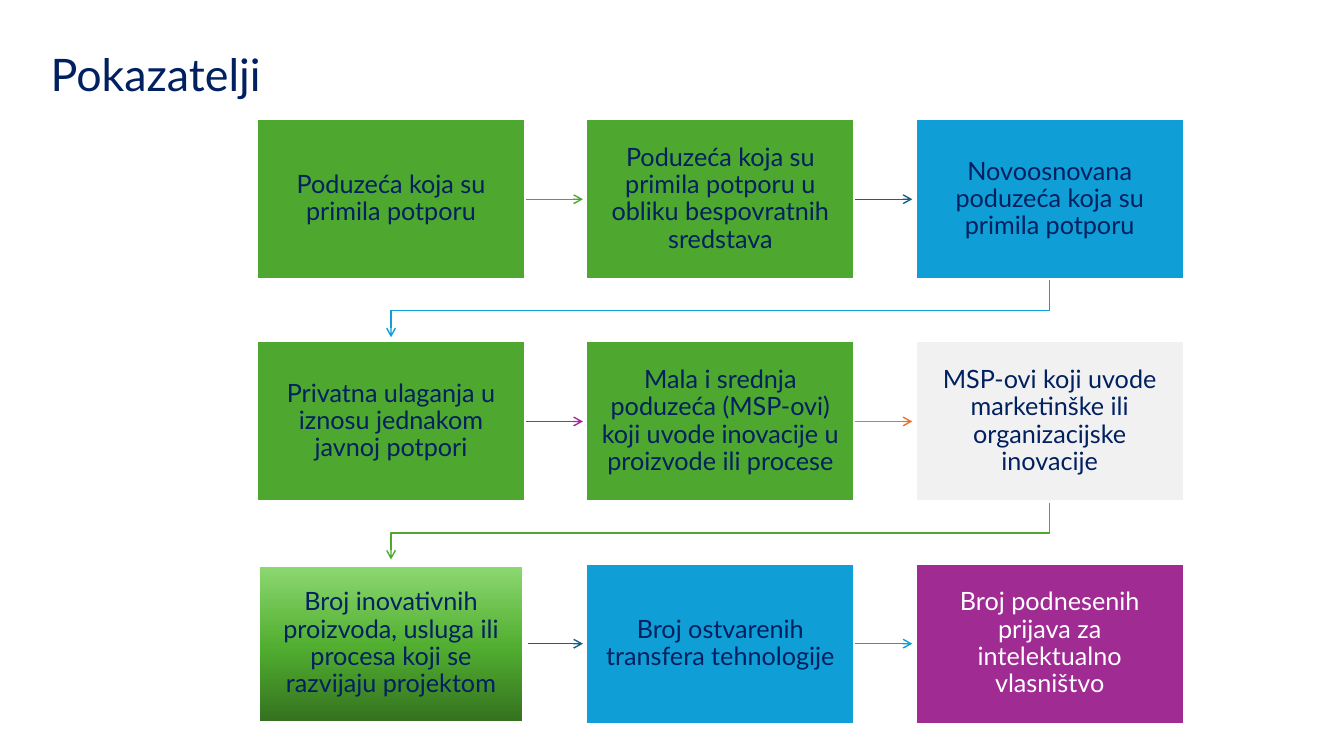
from copy import deepcopy

from lxml.etree import SubElement
from pptx import Presentation
from pptx.dml.color import RGBColor
from pptx.enum.shapes import MSO_CONNECTOR as Connector, MSO_SHAPE as Shape
from pptx.enum.text import MSO_ANCHOR as Anchor, PP_ALIGN as Align
from pptx.oxml.ns import qn
from pptx.util import Cm, Pt

COLOURS = {
    "navy": "002060", "green": "4EA72E", "blue": "0F9ED5", "teal": "156082",
    "purple": "A02B93", "orange": "E97132", "grey": "F1F1F1", "white": "FFFFFF",
    "dark green": "34701F", "mid green": "51AE30", "light green": "8ED973",
}
FONT = "Lato"
COLUMNS = 3
LEFT, TOP = 6.48, 3
WIDTH, HEIGHT = 6.75, 4.04
STEP_X, STEP_Y = 8.3, 5.6
REACH = 1.46
BEND = 0.79

INDICATORS = [
    ("Poduzeća koja su primila potporu", "green", "green"),
    ("Poduzeća koja su primila potporu u obliku bespovratnih sredstava", "green", "teal"),
    ("Novoosnovana poduzeća koja su primila potporu", "blue", "blue"),
    ("Privatna ulaganja u iznosu jednakom javnoj potpori", "green", "purple"),
    ("Mala i srednja poduzeća (MSP-ovi) koji uvode inovacije u proizvode ili procese",
     "green", "orange"),
    ("MSP-ovi koji uvode marketinške ili organizacijske inovacije", "grey", "green"),
    ("Broj inovativnih proizvoda, usluga ili procesa koji se razvijaju projektom",
     "gradient", "teal"),
    ("Broj ostvarenih transfera tehnologije", "blue", "blue"),
    ("Broj podnesenih prijava za intelektualno vlasništvo", "purple", None),
]


def colour(name):
    return RGBColor.from_string(COLOURS[name])


def write_text(shape, text, size, ink, align):
    frame = shape.text_frame
    frame.text = text
    frame.word_wrap = True
    frame.vertical_anchor = Anchor.MIDDLE
    para = frame.paragraphs[0]
    para.alignment = align
    para.line_spacing = 0.9
    font = para.runs[0].font
    font.name = FONT
    font.size = Pt(size)
    font.color.rgb = colour(ink)


def add_title(page, text):
    title = page.shapes.title
    title.left, title.top, title.width, title.height = Cm(1.02), Cm(0), Cm(26.14), Cm(3.89)
    write_text(title, text, 32, "navy", Align.LEFT)


def fill_gradient(box):
    box.fill.gradient()
    box.fill.gradient_angle = 90
    stop_list = box.fill._fill._gradFill.find(qn("a:gsLst"))
    stop_list.insert(1, deepcopy(stop_list[0]))
    stops = [("dark green", 0), ("mid green", 0.48), ("light green", 1)]
    for stop, (name, position) in zip(box.fill.gradient_stops, stops):
        stop.color.rgb = colour(name)
        stop.position = position


def add_box(page, left, top, text, fill):
    box = page.shapes.add_shape(Shape.RECTANGLE, Cm(left), Cm(top), Cm(WIDTH), Cm(HEIGHT))
    box.shadow.inherit = False
    if fill == "gradient":
        fill_gradient(box)
    else:
        box.fill.solid()
        box.fill.fore_color.rgb = colour(fill)
    box.line.color.rgb = colour("white")
    box.line.width = Pt(4.5 if fill == "gradient" else 1.5)
    frame = box.text_frame
    frame.margin_left = frame.margin_right = Cm(0.33)
    frame.margin_top = frame.margin_bottom = Cm(0.35)
    write_text(box, text, 18, "white" if fill == "purple" else "navy", Align.CENTER)
    return box


def finish_arrow(page, arrow, ink):
    arrow.line.color.rgb = colour(ink)
    arrow.line.width = Pt(1)
    SubElement(arrow.line._get_or_add_ln(), qn("a:tailEnd"), type="arrow")
    page.shapes._spTree.insert(2, arrow._element)


def add_straight_arrow(page, box, ink):
    start = box.left + box.width
    middle = box.top + box.height // 2
    arrow = page.shapes.add_connector(
        Connector.STRAIGHT, start, middle, start + Cm(REACH), middle)
    arrow.begin_connect(box, 3)
    finish_arrow(page, arrow, ink)
    SubElement(arrow._element.spPr, qn("a:effectLst"))


def add_return_arrow(page, box, ink):
    start_x = box.left + box.width // 2
    end_x = Cm(LEFT + WIDTH / 2)
    bottom = box.top + box.height
    bend = bottom + Cm(BEND)
    builder = page.shapes.build_freeform(start_x, bottom)
    builder.add_line_segments(
        [(start_x, bend), (end_x, bend), (end_x, bottom + Cm(REACH))], close=False)
    arrow = builder.convert_to_shape()
    arrow.shadow.inherit = False
    arrow.fill.background()
    finish_arrow(page, arrow, ink)


def main():
    deck = Presentation()
    deck.slide_width, deck.slide_height = Cm(33.87), Cm(19.05)
    page = deck.slides.add_slide(deck.slide_layouts[5])
    add_title(page, "Pokazatelji")
    for index, (text, fill, ink) in enumerate(INDICATORS):
        row, column = divmod(index, COLUMNS)
        box = add_box(page, LEFT + column * STEP_X, TOP + row * STEP_Y, text, fill)
        if ink and column == COLUMNS - 1:
            add_return_arrow(page, box, ink)
        elif ink:
            add_straight_arrow(page, box, ink)
    deck.save("out.pptx")


if __name__ == "__main__":
    main()
